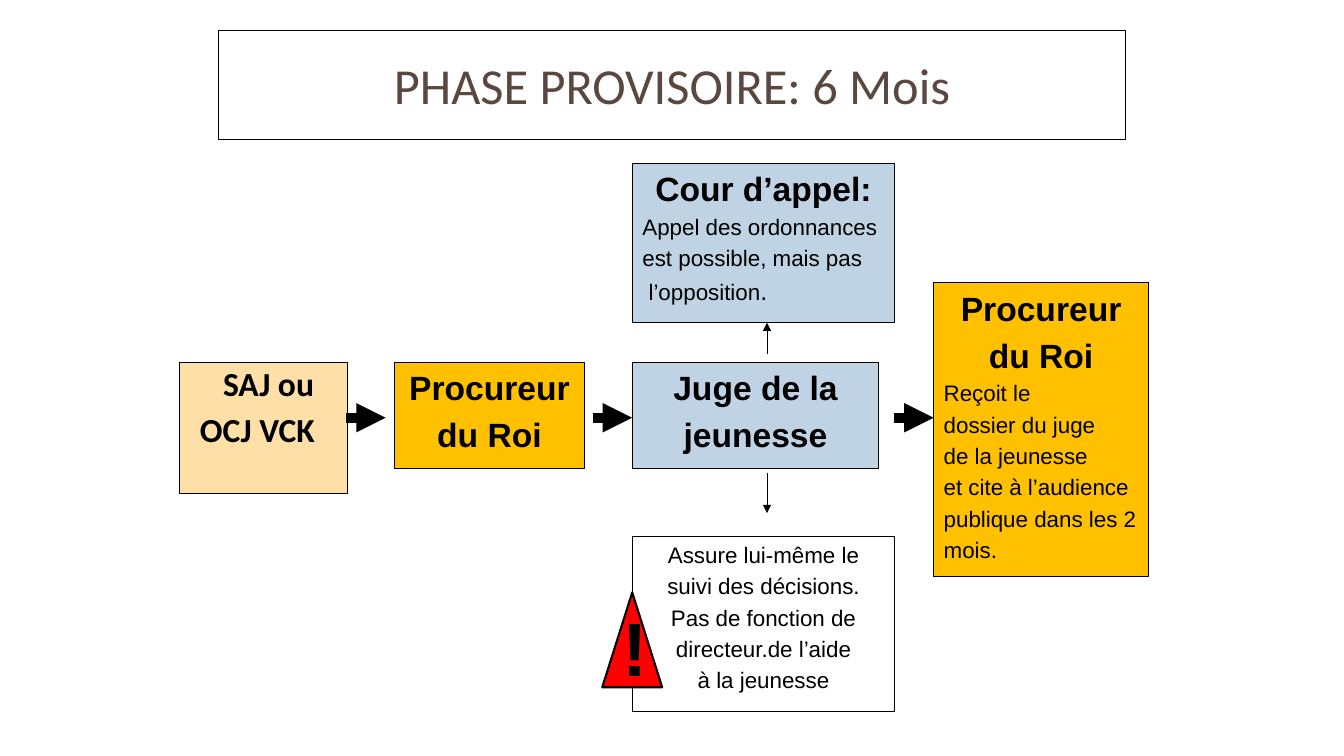
from pptx import Presentation
from pptx.dml.color import RGBColor
from pptx.enum.shapes import MSO_CONNECTOR, MSO_SHAPE
from pptx.enum.text import MSO_ANCHOR, PP_ALIGN
from pptx.oxml.ns import qn
from pptx.util import Pt
from lxml.etree import SubElement

LEFT, CENTER = PP_ALIGN.LEFT, PP_ALIGN.CENTER


def paint(fmt, color):
    fmt.solid()
    fmt.fore_color.rgb = RGBColor.from_string(color)


def write(tf, text, size=16, font="Arial", color="000000", bold=False,
          align=LEFT, before=None, spacing=None, indent=0, new=True):
    """Add text as a paragraph, or to the last one if new is False."""
    first = not tf.text
    p = tf.add_paragraph() if new and not first else tf.paragraphs[-1]
    if new:
        p.alignment = align
        p.line_spacing = spacing
        p.space_before = Pt((2.4 if first else size / 5) if before is None else before)
        p._p.get_or_add_pPr().set("marL", str(Pt(indent)))
    r = p.add_run()
    r.text = text
    r.font.size, r.font.name, r.font.bold = Pt(size), font, bold
    paint(r.font.fill, color)


prs = Presentation()
prs.slide_width, prs.slide_height = Pt(960), Pt(540)
s = prs.slides.add_slide(prs.slide_layouts[6])

# Boxes: left, top, width, height, fill
boxes = {
    "title": (156.2, 21.6, 648, 78, None),
    "saj": (128.2, 258.7, 119.8, 93.6, "FEDFA8"),
    "procureur": (281.6, 258.7, 136.1, 76.3, "FFC000"),
    "juge": (451.8, 258.7, 175.7, 76.3, "BFD3E4"),
    "cour": (451.8, 116.6, 187.2, 113.8, "BFD3E4"),
    "suivi": (451.8, 383, 187.2, 125, None),
    "citation": (667, 201.9, 153.4, 209.9, "FFC000"),
}
frames = {}
for name, (x, y, w, h, fill) in boxes.items():
    sp = s.shapes.add_shape(MSO_SHAPE.RECTANGLE, Pt(x), Pt(y), Pt(w), Pt(h))
    sp.shadow.inherit = False
    if fill:
        paint(sp.fill, fill)
    else:
        sp.fill.background()
    paint(sp.line.fill, "000000")
    sp.line.width = Pt(0.75)
    tf = frames[name] = sp.text_frame
    tf.word_wrap = True
    tf.vertical_anchor = MSO_ANCHOR.MIDDLE if name == "title" else MSO_ANCHOR.TOP

# Title and first box
write(frames["title"], "PHASE PROVISOIRE: 6 Mois", size=36, font="Calibri",
      color="594740", align=CENTER, before=0)
for text, align in (("SAJ ou", CENTER), ("OCJ VCK", LEFT)):
    write(frames["saj"], text, size=24, font="Calibri", bold=True, align=align,
          before=7, spacing=0.9, indent=7.5)

# Bold headings
headings = {
    "procureur": ["Procureur", "du Roi"],
    "juge": ["Juge de la", "jeunesse"],
    "cour": ["Cour d’appel:"],
    "citation": ["Procureur", "du Roi"],
}
for name, lines in headings.items():
    for text in lines:
        write(frames[name], text, size=24, bold=True, align=CENTER)

# Body lines
bodies = {
    "cour": (LEFT, ["Appel des ordonnances", "est possible, mais pas",
                    " l’opposition"]),
    "suivi": (CENTER, ["Assure lui-même le", "suivi des décisions.",
                       "Pas de fonction de", "directeur.de l’aide",
                       "à la jeunesse"]),
    "citation": (LEFT, ["Reçoit le", "dossier du juge", "de la jeunesse",
                        "et cite à l’audience", "publique dans les 2", "mois."]),
}
for name, (align, lines) in bodies.items():
    for text in lines:
        write(frames[name], text, align=align)
write(frames["cour"], ".", size=18, new=False)

# Arrows: from x, y to x, y, width
row, axis = 298.4, 547.9
arrows = [(x, row, x + 28.1, row, 7) for x in (247.4, 423.4, 638.8)]
arrows += [(axis, 337.7, axis, 366.5, 0.75), (axis, 252.7, axis, 230.4, 0.75)]
for x1, y1, x2, y2, width in arrows:
    c = s.shapes.add_connector(MSO_CONNECTOR.STRAIGHT, Pt(x1), Pt(y1), Pt(x2), Pt(y2))
    paint(c.line.fill, "000000")
    c.line.width = Pt(width)
    SubElement(c.line._get_or_add_ln(), qn("a:tailEnd"), type="triangle")
    SubElement(c._element.spPr, qn("a:effectLst"))

# Warning sign
sp = s.shapes.add_shape(MSO_SHAPE.ISOSCELES_TRIANGLE, Pt(430.2), Pt(423.2), Pt(42.8), Pt(67.7))
sp.shadow.inherit = False
paint(sp.fill, "FF0000")
paint(sp.line.fill, "000000")
sp.line.width = Pt(1.5)
tf = s.shapes.add_textbox(Pt(437.4), Pt(425.5), Pt(73.4), Pt(72.7)).text_frame
tf.word_wrap = True
write(tf, "!", size=54, bold=True, before=0)

prs.save("out.pptx")
